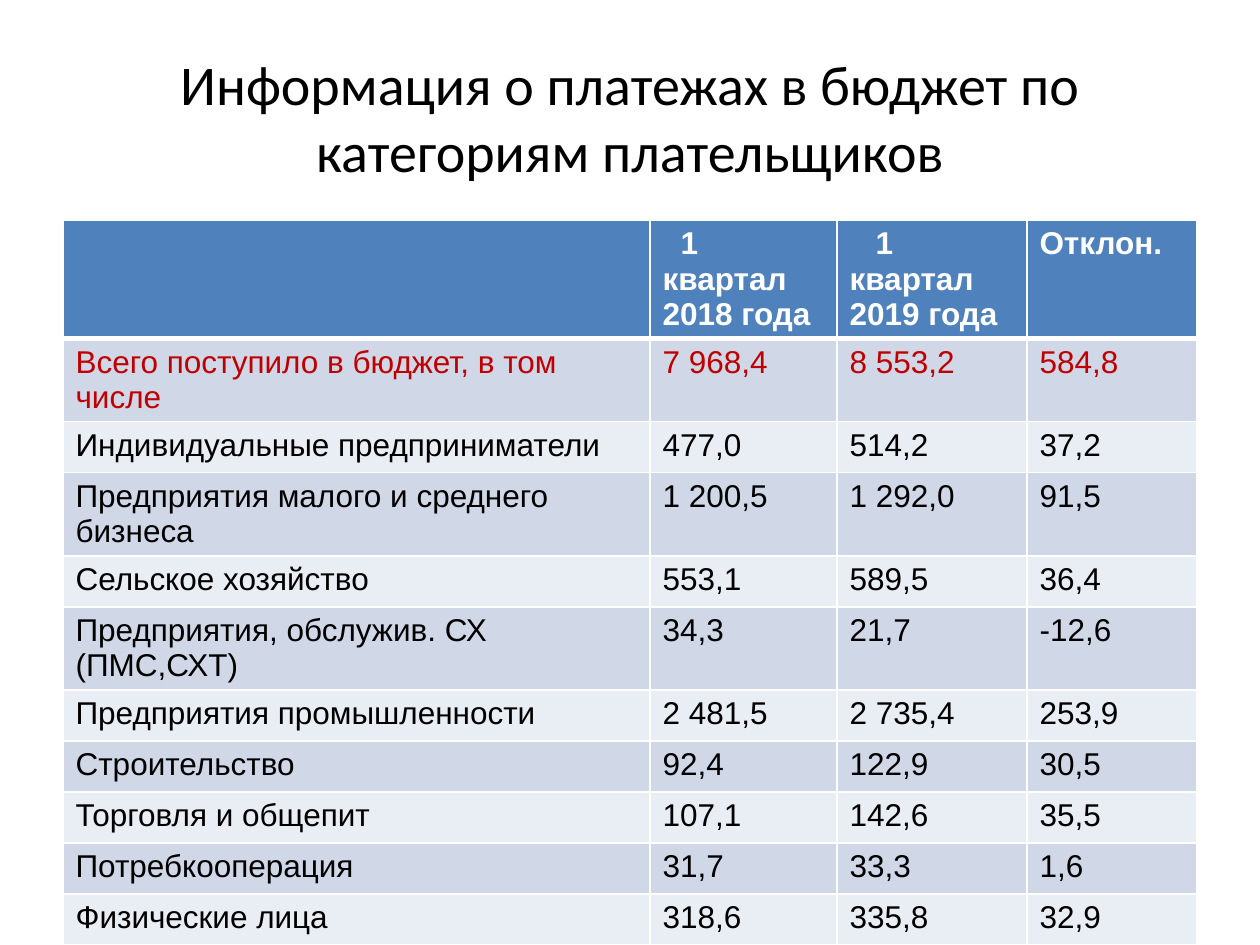
from lxml.etree import SubElement
from pptx import Presentation
from pptx.dml.color import RGBColor
from pptx.enum.text import MSO_ANCHOR, MSO_AUTO_SIZE, PP_ALIGN
from pptx.oxml.ns import qn
from pptx.util import Pt

SCALE = 914400 / 126
WHITE, BLACK, RED = "FFFFFF", "000000", "C00000"
HEAD, BANDS = "4F81BD", ("D0D8E8", "E9EDF4")

TITLE = "Информация о платежах в бюджет по категориям плательщиков"
COLS = (587, 187, 190, 170)
ROWS = [
    ("", "1 квартал 2018 года", "1 квартал 2019 года", "Отклон."),
    ("Всего поступило в бюджет, в том числе", "7 968,4", "8 553,2", "584,8"),
    ("Индивидуальные предприниматели", "477,0", "514,2", "37,2"),
    ("Предприятия малого и среднего бизнеса", "1 200,5", "1 292,0", "91,5"),
    ("Сельское хозяйство", "553,1", "589,5", "36,4"),
    ("Предприятия, обслужив. СХ (ПМС,СХТ)", "34,3", "21,7", "-12,6"),
    ("Предприятия промышленности", "2 481,5", "2 735,4", "253,9"),
    ("Строительство", "92,4", "122,9", "30,5"),
    ("Торговля и общепит", "107,1", "142,6", "35,5"),
    ("Потребкооперация", "31,7", "33,3", "1,6"),
    ("Физические лица", "318,6", "335,8", "32,9"),
]
INDENTS = {(0, 1): 18, (0, 2): 26}  # first line of the quarter headings


def px(n):
    return round(n * SCALE)


def color(code):
    return RGBColor.from_string(code)


class Deck:
    def __init__(self, width, height):
        self.prs = Presentation()
        self.prs.slide_width, self.prs.slide_height = px(width), px(height)
        self.slide = self.prs.slides.add_slide(self.prs.slide_layouts[5])

    def style(self, para, code, **values):
        for name, value in values.items():
            setattr(para.font, name, value)
        para.font.color.rgb = color(code)

    def title(self, text, left, top, width, height):
        shape = self.slide.shapes.title
        box = {"left": left, "top": top, "width": width, "height": height}
        for name, value in box.items():
            setattr(shape, name, px(value))
        frame = shape.text_frame
        frame.text = text
        frame.word_wrap = True
        frame.auto_size = MSO_AUTO_SIZE.NONE
        frame.vertical_anchor = MSO_ANCHOR.MIDDLE
        para = frame.paragraphs[0]
        para.alignment = PP_ALIGN.CENTER
        self.style(para, BLACK, name="Calibri", size=Pt(32), bold=False)

    def border(self, cell, **widths):
        props = cell._tc.get_or_add_tcPr()
        for side, width in widths.items():
            line = SubElement(props, qn("a:ln" + side), w=str(Pt(width)))
            fill = SubElement(line, qn("a:solidFill"))
            SubElement(fill, qn("a:srgbClr"), val=WHITE)

    def cell(self, cell, text, fill, ink, bold, indent):
        cell.text = text
        para = cell.text_frame.paragraphs[0]
        self.style(para, ink, name="Arial", size=Pt(18), bold=bold)
        if indent:
            props = para._p.get_or_add_pPr()
            props.set("marL", "0")
            props.set("indent", str(px(indent)))
        cell.fill.solid()
        cell.fill.fore_color.rgb = color(fill)

    def table(self, rows, cols, left, top, pitch):
        frame = self.slide.shapes.add_table(
            len(rows), len(cols), px(left), px(top),
            px(sum(cols)), px(pitch * len(rows)))
        grid = frame.table
        for col, width in zip(grid.columns, cols):
            col.width = px(width)
        for r, row in enumerate(rows):
            grid.rows[r].height = px(pitch)
            fill = BANDS[(r - 1) % 2] if r else HEAD
            ink = {0: WHITE, 1: RED}.get(r, BLACK)
            for c, text in enumerate(row):
                cell = grid.cell(r, c)
                self.border(cell, L=1, R=1, T=3 if r == 1 else 1,
                            B=1 if r else 3)
                self.cell(cell, text, fill, ink, r == 0, INDENTS.get((r, c)))


def main():
    deck = Deck(1260, 945)
    # Heading
    deck.title(TITLE, 63, 38, 1134, 158)
    # Payments by category
    deck.table(ROWS, COLS, left=63, top=220, pitch=51)
    deck.prs.save("out.pptx")


if __name__ == "__main__":
    main()
